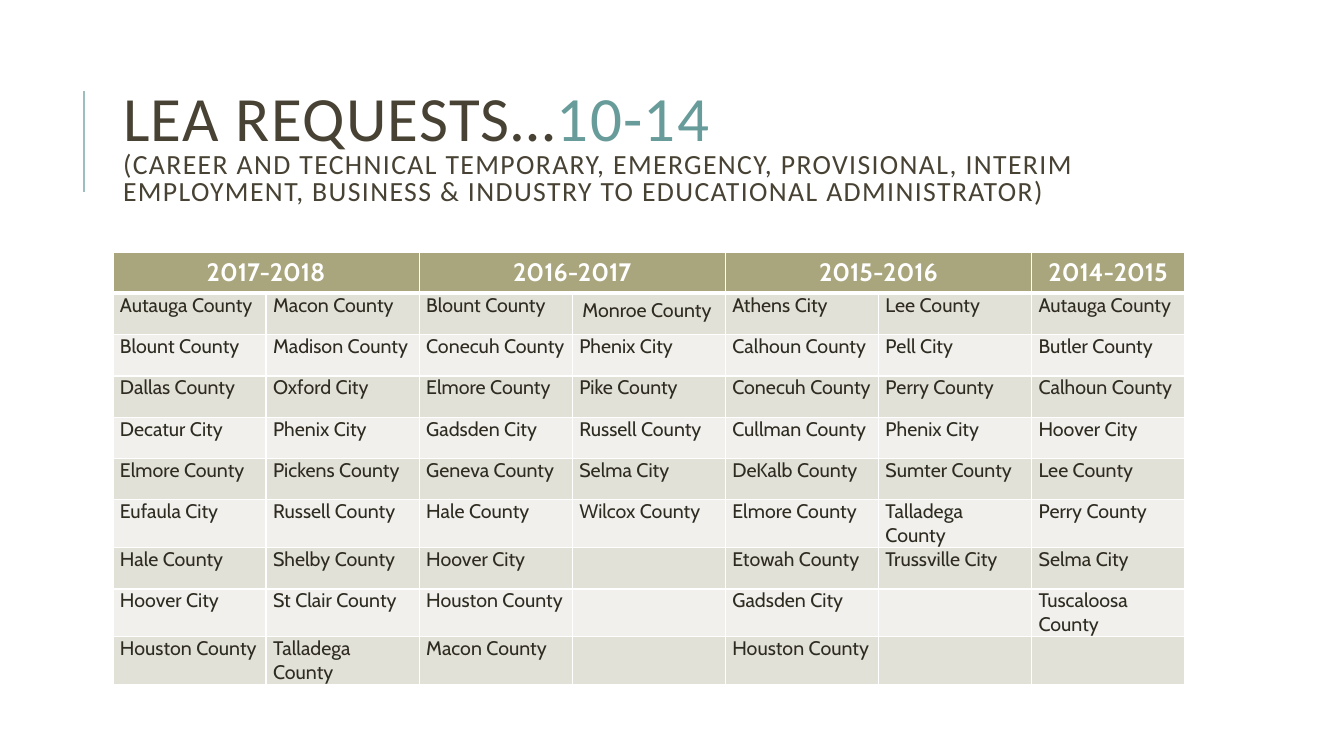
"""Build the slide of LEA requests by school year."""
from typing import NamedTuple

from lxml import etree
from pptx import Presentation
from pptx import util as u
from pptx.dml import color
from pptx.enum import shapes, text
from pptx.oxml import ns


class Style(NamedTuple):
    size: float
    font: str
    hue: str
    bold: bool = False
    track: int = 0


class Year(NamedTuple):
    name: str
    lists: tuple[str, ...]


DARK, TEAL, WHITE = "474233", "689C9A", "FFFFFF"
HEAD_FILL, BANDS = "A9A57C", ("E2E1D7", "F1F0EC")
LEFT, WIDTH, ROW = 1.12, 10.63, 0.41
HEAD = Style(18, "Cabin", WHITE, True)
BODY = Style(14, "Cabin", "2E2B21")
BIG = Style(45, "Calibri", DARK, track=100)
SMALL = BIG._replace(size=19.8)

YEARS = (
    Year("2017-2018", (
        "Autauga County,Blount County,Dallas County,Decatur City,Elmore County,"
        "Eufaula City,Hale County,Hoover City,Houston County",
        "Macon County,Madison County,Oxford City,Phenix City,Pickens County,"
        "Russell County,Shelby County,St Clair County,Talladega County")),
    Year("2016-2017", (
        "Blount County,Conecuh County,Elmore County,Gadsden City,Geneva County,"
        "Hale County,Hoover City,Houston County,Macon County",
        "Monroe County,Phenix City,Pike County,Russell County,Selma City,"
        "Wilcox County")),
    Year("2015-2016", (
        "Athens City,Calhoun County,Conecuh County,Cullman County,DeKalb County,"
        "Elmore County,Etowah County,Gadsden City,Houston County",
        "Lee County,Pell City,Perry County,Phenix City,Sumter County,"
        "Talladega County,Trussville City")),
    Year("2014-2015", (
        "Autauga County,Butler County,Calhoun County,Hoover City,Lee County,"
        "Perry County,Selma City,Tuscaloosa County",)),
)


def rgb(code: str) -> color.RGBColor:
    return color.RGBColor.from_string(code)


def add_run(para, words: str, style: Style) -> None:
    run = para.add_run()
    run.text = words
    font = run.font
    font.size, font.name, font.bold = u.Pt(style.size), style.font, style.bold
    font.color.rgb = rgb(style.hue)
    if style.track:
        run._r.get_or_add_rPr().set("spc", str(style.track))


def add_title(slide) -> None:
    title = slide.shapes.title
    title.left, title.top = u.Inches(LEFT), u.Inches(1.94)
    title.width, title.height = u.Inches(WIDTH), u.Inches(0.34)
    frame = title.text_frame
    frame.auto_size, frame.word_wrap = text.MSO_AUTO_SIZE.NONE, True
    frame.vertical_anchor = text.MSO_ANCHOR.BOTTOM
    frame.margin_top, frame.margin_bottom = 0, u.Inches(0.23)
    para = frame.paragraphs[0]
    para.alignment, para.line_spacing = text.PP_ALIGN.LEFT, 0.8
    add_run(para, "LEA REQUESTS…", BIG)
    add_run(para, "10-14", BIG._replace(hue=TEAL))
    para.add_line_break()
    add_run(para, "(CAREER AND TECHNICAL TEMPORARY, EMERGENCY, PROVISIONAL, INTERIM "
            "EMPLOYMENT, BUSINESS & INDUSTRY TO EDUCATIONAL ADMINISTRATOR)", SMALL)


def add_rule(slide) -> None:
    x = u.Inches(0.83)
    rule = slide.shapes.add_connector(
        shapes.MSO_CONNECTOR.STRAIGHT, x, u.Inches(1.9), x, u.Inches(0.9))
    rule.line.color.rgb, rule.line.width = rgb("9CBEBD"), u.Pt(1.5)
    etree.SubElement(rule._element.spPr, ns.qn("a:effectLst"))


def paint(cell, fill: str, top: float = 1, base: float = 1) -> None:
    props = cell._tc.get_or_add_tcPr()
    for side, width in zip("LRTB", (1, 1, top, base)):
        line = etree.SubElement(props, ns.qn(f"a:ln{side}"), w=str(u.Pt(width)))
        solid = etree.SubElement(line, ns.qn("a:solidFill"))
        etree.SubElement(solid, ns.qn("a:srgbClr"), val=WHITE)
    cell.fill.solid()
    cell.fill.fore_color.rgb = rgb(fill)


def add_grid(slide) -> None:
    cols = [names.split(",") for year in YEARS for names in year.lists]
    rows = max(map(len, cols)) + 1
    grid = slide.shapes.add_table(
        rows, len(cols), u.Inches(LEFT), u.Inches(2.5),
        u.Inches(WIDTH), u.Inches(ROW * rows)).table
    for c, names in enumerate(cols):
        paint(grid.cell(0, c), HEAD_FILL, base=3)
        for r in range(1, rows):
            cell = grid.cell(r, c)
            paint(cell, BANDS[(r - 1) % 2], top=3 if r == 1 else 1)
            if r > len(names):
                continue
            name = names[r - 1]
            add_run(cell.text_frame.paragraphs[0], name, BODY)
            if name != "Monroe County":
                cell.margin_left = cell.margin_right = u.Inches(0.07)
                cell.margin_top = cell.margin_bottom = 0
    start = 0
    for year in YEARS:
        cell, span = grid.cell(0, start), len(year.lists)
        if span > 1:
            cell.merge(grid.cell(0, start + span - 1))
        para = cell.text_frame.paragraphs[0]
        para.alignment = text.PP_ALIGN.CENTER
        add_run(para, year.name, HEAD)
        start += span


def main() -> None:
    deck = Presentation()
    deck.slide_width, deck.slide_height = u.Inches(13.33), u.Inches(7.5)
    slide = deck.slides.add_slide(deck.slide_layouts[5])
    add_rule(slide)
    add_title(slide)
    add_grid(slide)
    deck.save("out.pptx")


if __name__ == "__main__":
    main()
